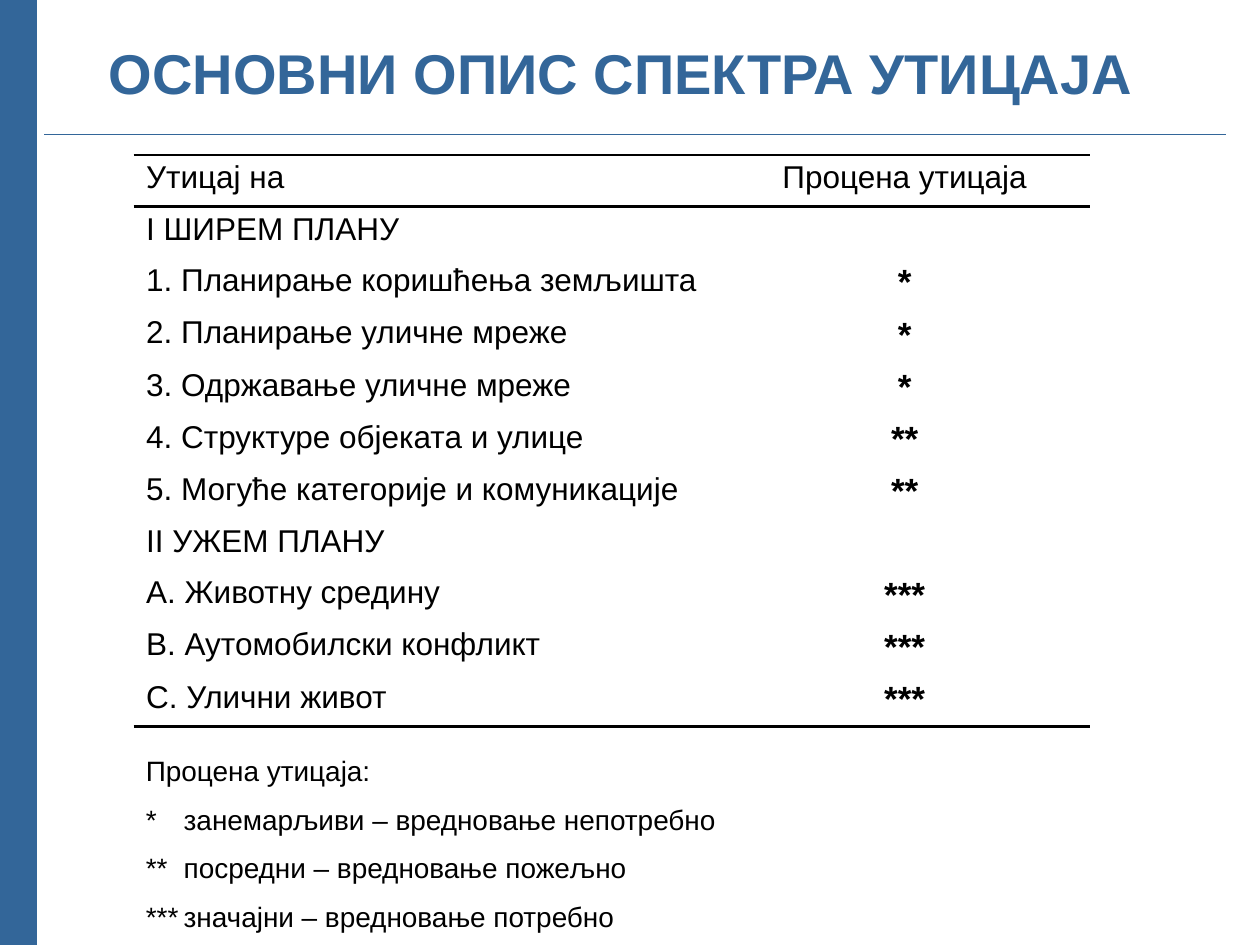
from dataclasses import dataclass

from lxml import etree
from pptx import Presentation
from pptx.dml.color import RGBColor
from pptx.enum.shapes import MSO_CONNECTOR
from pptx.enum.text import MSO_ANCHOR, PP_ALIGN
from pptx.oxml.ns import qn
from pptx.util import Inches, Pt

STRAIGHT = MSO_CONNECTOR.STRAIGHT
LEFT, CENTER = PP_ALIGN.LEFT, PP_ALIGN.CENTER
TOP, MIDDLE = MSO_ANCHOR.TOP, MSO_ANCHOR.MIDDLE


@dataclass(frozen=True)
class Theme:
    font: str = "Arial"
    accent: str = "336699"
    ink: str = "000000"
    title: int = 32
    body: int = 18
    rating: int = 20
    legend: int = 16
    rule: float = 1.5
    end_rule: float = 2.25


THEME = Theme()
WIDTH, HEIGHT = 10, 7.5
CONTENT_LEFT = 1.06
COLUMNS = (4.65, 2.94)
ROW_HEIGHT = 0.41
LEGEND_INDENT = 0.3

TITLE = "ОСНОВНИ ОПИС СПЕКТРА УТИЦАЈА"
IMPACTS = [
    ("Утицај на", "Процена утицаја"),
    ("I ШИРЕМ ПЛАНУ", ""),
    ("1. Планирање коришћења земљишта", "*"),
    ("2. Планирање уличне мреже", "*"),
    ("3. Одржавање уличне мреже", "*"),
    ("4. Структуре објеката и улице", "**"),
    ("5. Могуће категорије и комуникације", "**"),
    ("II УЖЕМ ПЛАНУ", ""),
    ("A. Животну средину", "***"),
    ("B. Аутомобилски конфликт", "***"),
    ("C. Улични живот", "***"),
]
LEGEND = [
    "Процена утицаја:",
    "*\tзанемарљиви – вредновање непотребно",
    "**\tпосредни – вредновање пожељно",
    "***\tзначајни – вредновање потребно",
]


def write(frame, lines, size, color=THEME.ink, bold=False, align=LEFT,
          anchor=TOP, gap=0, line_spacing=None, hanging=0):
    """Fill a text frame, one paragraph a line; gap is the space between them."""
    frame.word_wrap = True
    frame.vertical_anchor = anchor
    for index, line in enumerate(lines):
        paragraph = frame.paragraphs[0] if index == 0 else frame.add_paragraph()
        paragraph.alignment = align
        paragraph.space_before = Pt(gap if index else 0)
        if line_spacing:
            paragraph.line_spacing = line_spacing
        if hanging:
            properties = paragraph._p.get_or_add_pPr()
            properties.set("marL", str(Inches(hanging)))
            properties.set("indent", str(-Inches(hanging)))
        run = paragraph.add_run()
        run.text = line
        run.font.name = THEME.font
        run.font.size = Pt(size)
        run.font.bold = bold
        run.font.color.rgb = RGBColor.from_string(color)


def add_text(slide, left, top, width, height, lines, **text_format):
    box = slide.shapes.add_textbox(*map(Inches, (left, top, width, height)))
    write(box.text_frame, lines, **text_format)


def add_line(slide, start, end, width):
    line = slide.shapes.add_connector(STRAIGHT, *map(Inches, (*start, *end)))
    line.line.color.rgb = RGBColor.from_string(THEME.accent)
    line.line.width = Pt(width)
    etree.SubElement(line._element.spPr, qn("a:effectLst"))


def set_borders(cell, top, bottom):
    """Draw the top and bottom borders in points; 0 means no line."""
    properties = cell._tc.get_or_add_tcPr()
    for side, width in (("L", 0), ("R", 0), ("T", top), ("B", bottom)):
        border = etree.SubElement(properties, qn(f"a:ln{side}"), w=str(Pt(width)))
        if width:
            fill = etree.SubElement(border, qn("a:solidFill"))
            etree.SubElement(fill, qn("a:srgbClr"), val=THEME.ink)
        else:
            etree.SubElement(border, qn("a:noFill"))


def add_impact_table(slide, left, top):
    count = len(IMPACTS)
    table = slide.shapes.add_table(
        count, len(COLUMNS), Inches(left), Inches(top),
        Inches(sum(COLUMNS)), Inches(ROW_HEIGHT * count)).table
    table.first_row = table.horz_banding = False
    for column, width in zip(table.columns, COLUMNS):
        column.width = Inches(width)
    top_rules = {0: THEME.rule, 1: THEME.rule}
    bottom_rules = {0: THEME.rule, count - 1: THEME.end_rule}
    for row, texts in enumerate(IMPACTS):
        table.rows[row].height = Inches(ROW_HEIGHT)
        for column, text in enumerate(texts):
            cell = table.cell(row, column)
            cell.margin_top = cell.margin_bottom = Inches(0.04)
            set_borders(cell, top_rules.get(row, 0), bottom_rules.get(row, 0))
            cell.fill.background()
            is_rating = column == 1 and row > 0
            write(cell.text_frame, [text], bold=is_rating,
                  size=THEME.rating if is_rating else THEME.body,
                  align=CENTER if column else LEFT)


def main():
    deck = Presentation()
    deck.slide_width, deck.slide_height = Inches(WIDTH), Inches(HEIGHT)
    slide = deck.slides.add_slide(deck.slide_layouts[6])
    add_line(slide, (0.02, 0), (0.02, HEIGHT), 40)
    add_line(slide, (0.35, 1.07), (9.73, 1.07), 0.75)
    add_text(slide, 0.43, 0, 9, 1.25, [TITLE], size=THEME.title,
             color=THEME.accent, bold=True, align=CENTER, anchor=MIDDLE,
             line_spacing=0.8)
    add_impact_table(slide, CONTENT_LEFT, 1.23)
    add_text(slide, CONTENT_LEFT, 5.93, 7.8, 1.57, LEGEND, size=THEME.legend,
             gap=8.7, hanging=LEGEND_INDENT)
    deck.save("out.pptx")


if __name__ == "__main__":
    main()
